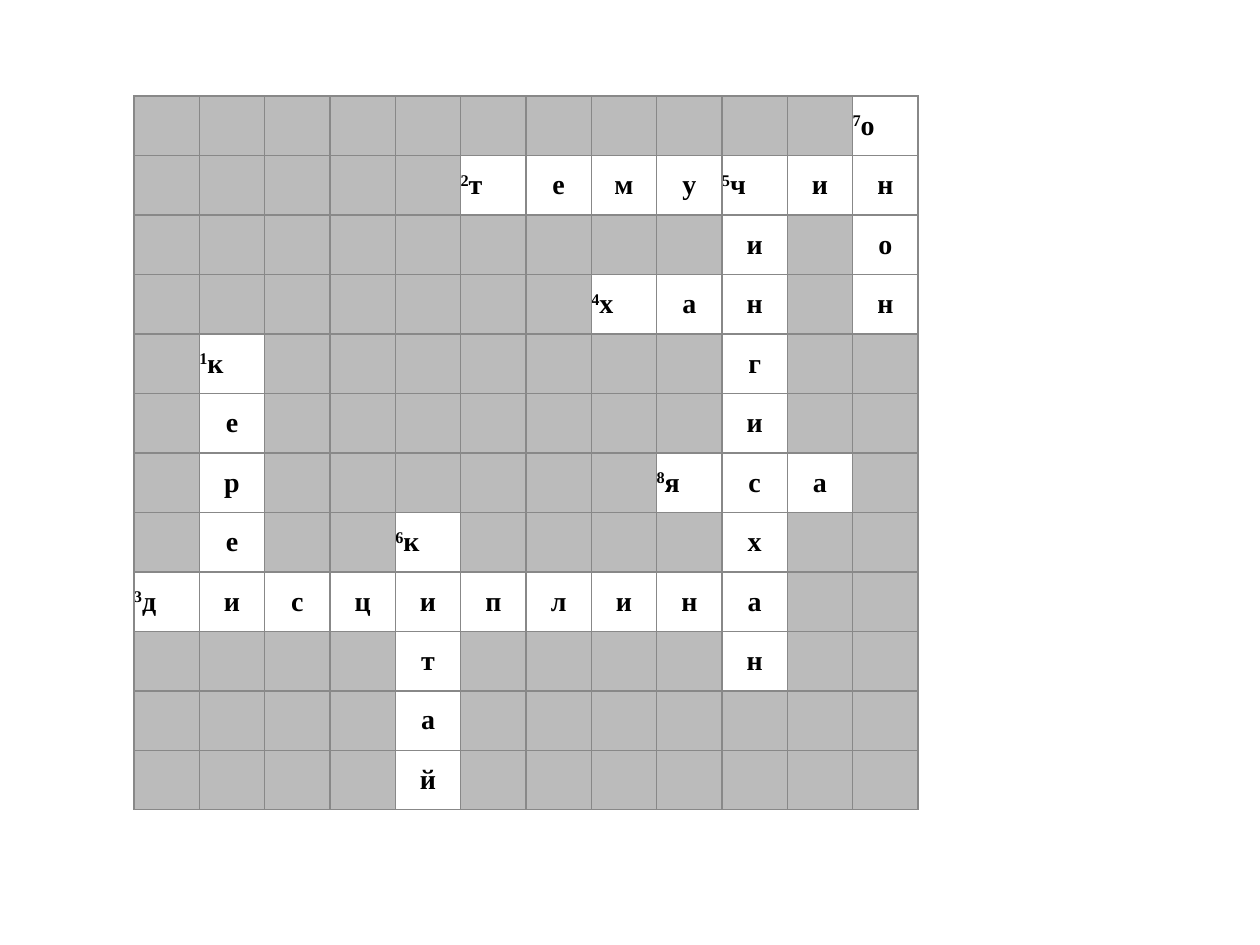
import dataclasses

import lxml.etree
import pptx
import pptx.dml.color
import pptx.enum.text
import pptx.oxml.ns
import pptx.util

EMU_PER_PX = 914400 / 126
GRID_SIZE = 12
GRID_BOX = (134, 96, 784, 714)
ACROSS = (0, 1)
DOWN = (1, 0)
WORDS = [
    (1, "кереи", 4, 1, DOWN),
    (2, "темучин", 1, 5, ACROSS),
    (3, "дисциплина", 8, 0, ACROSS),
    (4, "хан", 3, 7, ACROSS),
    (5, "чингисхан", 1, 9, DOWN),
    (6, "китай", 7, 4, DOWN),
    (7, "онон", 0, 11, DOWN),
    (8, "яса", 6, 8, ACROSS),
]


@dataclasses.dataclass(frozen=True)
class Theme:
    font: str = "Times New Roman"
    letter_size: int = 16
    space_after: int = 6
    border_width: int = 1
    text: str = "000000"
    blocked: str = "BBBBBB"
    border: str = "888888"


THEME = Theme()


def px(length):
    return pptx.util.Emu(round(length * EMU_PER_PX))


def add_text(paragraph, text, size=THEME.letter_size, bold=True, baseline=0):
    run = paragraph.add_run()
    run.text = text
    run.font.name = THEME.font
    run.font.size = pptx.util.Pt(size)
    run.font.bold = bold
    run.font.color.rgb = pptx.dml.color.RGBColor.from_string(THEME.text)
    if baseline:
        run.font._element.set("baseline", str(baseline * 1000))


def set_borders(cell):
    properties = cell._tc.get_or_add_tcPr()
    for side in ("lnL", "lnR", "lnT", "lnB"):
        line = lxml.etree.SubElement(properties, pptx.oxml.ns.qn(f"a:{side}"))
        line.set("w", str(pptx.util.Pt(THEME.border_width)))
        fill = lxml.etree.SubElement(line, pptx.oxml.ns.qn("a:solidFill"))
        color = lxml.etree.SubElement(fill, pptx.oxml.ns.qn("a:srgbClr"))
        color.set("val", THEME.border)


def place_words():
    letters, numbers = {}, {}
    for number, word, row, column, (row_step, column_step) in WORDS:
        numbers[row, column] = str(number)
        for index, letter in enumerate(word):
            letters[row + index * row_step, column + index * column_step] = letter
    return letters, numbers


def fill_letter_cell(cell, letter, number):
    cell.fill.background()
    paragraph = cell.text_frame.paragraphs[0]
    paragraph.space_after = pptx.util.Pt(THEME.space_after)
    if number:
        add_text(paragraph, number, baseline=30)
    else:
        paragraph.alignment = pptx.enum.text.PP_ALIGN.CENTER
    add_text(paragraph, letter)


def add_crossword(slide, box):
    left, top, width, height = box
    table = slide.shapes.add_table(
        GRID_SIZE, GRID_SIZE, px(left), px(top), px(width), px(height)
    ).table
    table.first_row = False
    table.horz_banding = False
    for column in table.columns:
        column.width = px(width / GRID_SIZE)
    for row in table.rows:
        row.height = px(height / GRID_SIZE)

    letters, numbers = place_words()
    for index, cell in enumerate(table.iter_cells()):
        position = divmod(index, GRID_SIZE)
        set_borders(cell)
        cell.margin_left = cell.margin_right = 0
        cell.margin_top = cell.margin_bottom = 0
        cell.vertical_anchor = pptx.enum.text.MSO_ANCHOR.MIDDLE
        if position in letters:
            fill_letter_cell(cell, letters[position], numbers.get(position))
        else:
            cell.fill.solid()
            cell.fill.fore_color.rgb = pptx.dml.color.RGBColor.from_string(THEME.blocked)


def main():
    presentation = pptx.Presentation()
    presentation.slide_width = px(1260)
    presentation.slide_height = px(945)
    slide = presentation.slides.add_slide(presentation.slide_layouts[6])
    add_crossword(slide, GRID_BOX)
    presentation.save("out.pptx")


if __name__ == "__main__":
    main()
